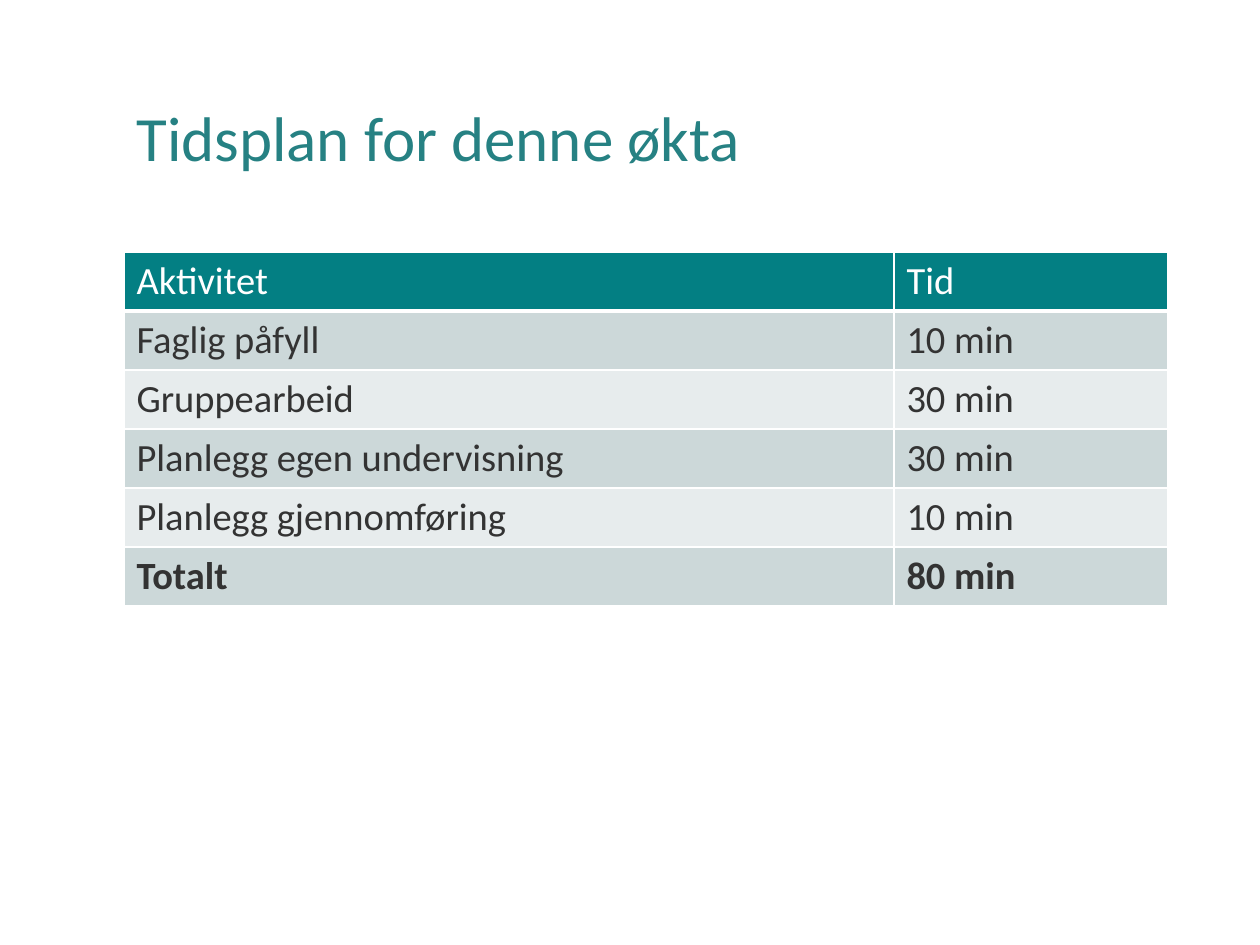
from lxml import etree
from pptx import Presentation
from pptx.dml.color import RGBColor
from pptx.enum.text import MSO_ANCHOR
from pptx.oxml.ns import qn
from pptx.util import Pt

PX = 914400 // 126
MIDDLE = MSO_ANCHOR.MIDDLE
FONT = "Calibri"
TITLE_TEAL = RGBColor(0x26, 0x81, 0x83)
HEADER_TEAL = RGBColor(0x03, 0x7F, 0x83)
BAND_DARK = RGBColor(0xCC, 0xD8, 0xD9)
BAND_LIGHT = RGBColor(0xE7, 0xEC, 0xED)
TEXT_GREY = RGBColor(0x33, 0x33, 0x33)
WHITE = RGBColor(0xFF, 0xFF, 0xFF)

LEFT = 124
COLUMN_WIDTHS = (770, 274)
ROW_HEIGHT = 59
SCHEDULE = (
    ("Aktivitet", "Tid"),
    ("Faglig påfyll", "10 min"),
    ("Gruppearbeid", "30 min"),
    ("Planlegg egen undervisning", "30 min"),
    ("Planlegg gjennomføring", "10 min"),
    ("Totalt", "80 min"),
)


def px(length):
    return length * PX


def style_text(paragraph, size, color, bold=False):
    for run in paragraph.runs:
        run.font.name = FONT
        run.font.size = Pt(size)
        run.font.bold = bold
        run.font.color.rgb = color


def add_title(slide, text):
    box = slide.shapes.add_textbox(px(LEFT), px(50), px(sum(COLUMN_WIDTHS)), px(183))
    frame = box.text_frame
    frame.word_wrap = True
    frame.vertical_anchor = MIDDLE
    frame.text = text
    paragraph = frame.paragraphs[0]
    paragraph.line_spacing = 0.9
    style_text(paragraph, 36, TITLE_TEAL)


def set_borders(cell, top, bottom):
    properties = cell._tc.get_or_add_tcPr()
    for side, width in (("L", 1), ("R", 1), ("T", top), ("B", bottom)):
        line = etree.SubElement(properties, qn(f"a:ln{side}"), w=str(Pt(width)))
        fill = etree.SubElement(line, qn("a:solidFill"))
        etree.SubElement(fill, qn("a:srgbClr"), val=str(WHITE))


def fill_cell(cell, text, row):
    is_header = row == 0
    set_borders(cell, top=3 if row == 1 else 1, bottom=3 if is_header else 1)
    cell.fill.solid()
    band = BAND_DARK if row % 2 else BAND_LIGHT
    cell.fill.fore_color.rgb = HEADER_TEAL if is_header else band
    cell.text_frame.text = text
    style_text(
        cell.text_frame.paragraphs[0],
        22,
        WHITE if is_header else TEXT_GREY,
        bold=row == len(SCHEDULE) - 1,
    )


def add_schedule(slide):
    table = slide.shapes.add_table(
        len(SCHEDULE), len(COLUMN_WIDTHS), px(LEFT), px(252),
        px(sum(COLUMN_WIDTHS)), px(ROW_HEIGHT * len(SCHEDULE)),
    ).table
    for column, width in zip(table.columns, COLUMN_WIDTHS):
        column.width = px(width)
    for row, texts in enumerate(SCHEDULE):
        table.rows[row].height = px(ROW_HEIGHT)
        for column, text in enumerate(texts):
            fill_cell(table.cell(row, column), text, row)


def main():
    presentation = Presentation()
    presentation.slide_width = px(1260)
    presentation.slide_height = px(945)
    slide = presentation.slides.add_slide(presentation.slide_layouts[6])
    add_title(slide, "Tidsplan for denne økta")
    add_schedule(slide)
    presentation.save("out.pptx")


if __name__ == "__main__":
    main()
